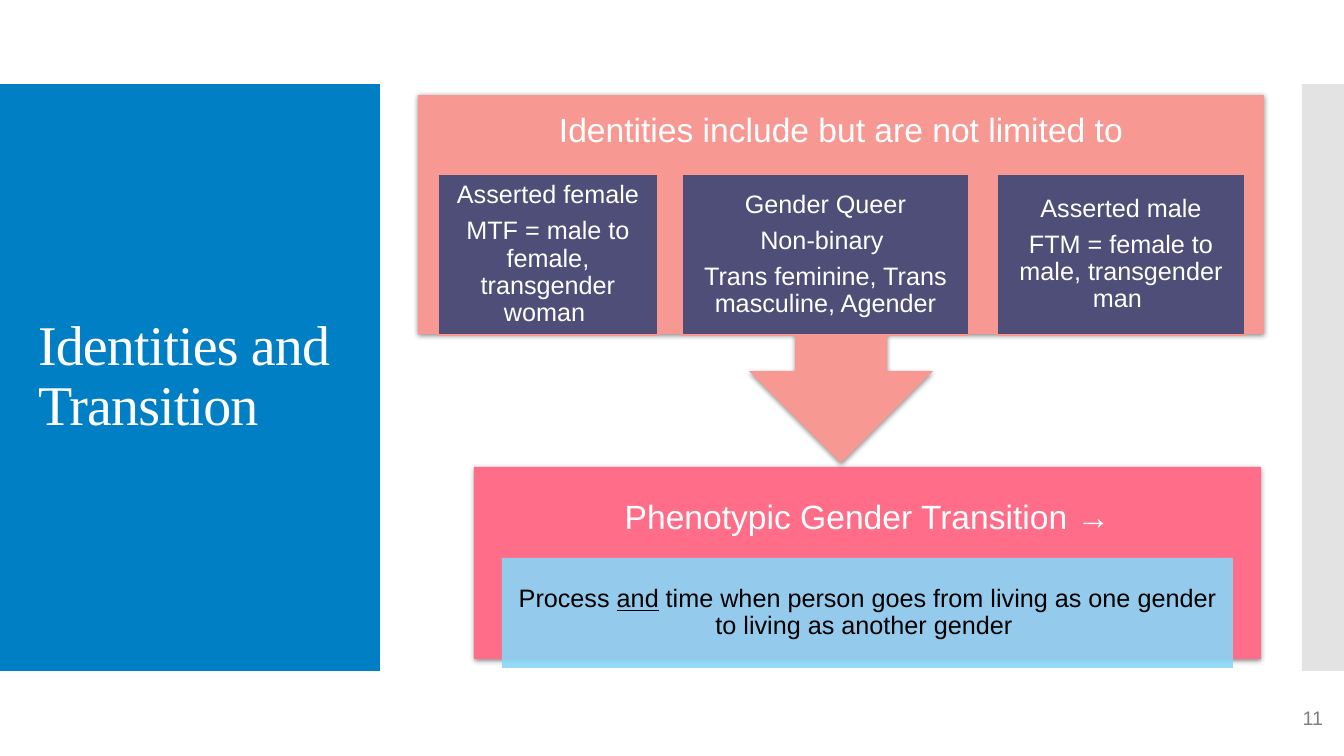
from collections import namedtuple
from dataclasses import dataclass
from lxml.etree import SubElement
from pptx import Presentation
from pptx.dml.color import RGBColor
from pptx.enum.shapes import MSO_SHAPE as SHAPE
from pptx.enum.text import MSO_ANCHOR as ANCHOR, PP_ALIGN as ALIGN
from pptx.oxml.ns import qn
from pptx.util import Pt

PX = 914400 / 100.8
Box = namedtuple("Box", "x y w h")


@dataclass(frozen=True)
class Theme:
    blue: str = "007FC4"
    grey: str = "C8C8C8"
    rose: str = "FF6D88"
    salmon: str = "F79992"
    navy: str = "3C4676"
    sky: str = "89D6F7"
    white: str = "FFFFFF"
    black: str = "000000"
    muted: str = "808080"
    serif: str = "Times New Roman"
    sans: str = "Arial"
    title: int = 40
    heading: int = 24
    body: int = 18
    number: int = 14


T = Theme()


def emu(*lengths):
    return [round(n * PX) for n in lengths]


def within(box, x, y, w, h):
    return Box(box.x + x, box.y + y, w, h)


def add_block(s, box, color, kind=SHAPE.RECTANGLE, opacity=100, line=None, shadow=False):
    sp = s.shapes.add_shape(kind, *emu(*box))
    sp.shadow.inherit = False
    sp.fill.solid()
    sp.fill.fore_color.rgb = RGBColor.from_string(color)
    if opacity < 100:
        clr = sp._element.spPr.find(qn("a:solidFill"))[0]
        SubElement(clr, qn("a:alpha"), val=str(opacity * 1000))
    if line:
        sp.line.color.rgb = RGBColor.from_string(line)
        sp.line.width = Pt(0.85)
    else:
        sp.line.fill.background()
    if shadow:
        effects = sp._element.spPr.find(qn("a:effectLst"))
        outer = SubElement(effects, qn("a:outerShdw"), blurRad=str(Pt(3.5)),
                           dist=str(Pt(1.1)), dir="5400000", rotWithShape="0")
        clr = SubElement(outer, qn("a:srgbClr"), val=T.black)
        SubElement(clr, qn("a:alpha"), val="45000")
    return sp


def add_label(s, box):
    return s.shapes.add_textbox(*emu(*box))


def write(sp, paragraphs, size, color, font=T.sans, align=ALIGN.CENTER,
          anchor=ANCHOR.MIDDLE, inset=(10, 5), leading=0.9, after=0.35, tracking=None):
    tf = sp.text_frame
    tf.word_wrap = True
    tf.vertical_anchor = anchor
    tf.margin_left = tf.margin_right = emu(inset[0])[0]
    tf.margin_top = tf.margin_bottom = emu(inset[1])[0]
    for i, runs in enumerate(paragraphs):
        p = tf.add_paragraph() if i else tf.paragraphs[0]
        p.alignment = align
        p.line_spacing = leading
        p.space_after = Pt(size * after)
        for text, underline in runs:
            r = p.add_run()
            r.text = text
            r.font.name = font
            r.font.size = Pt(size)
            r.font.color.rgb = RGBColor.from_string(color)
            if underline:
                r.font.underline = True
            if tracking:
                r._r.get_or_add_rPr().set("spc", str(tracking))


def plain(*lines):
    return [[(line, False)] for line in lines]


def title_panel(s, box):
    add_block(s, box, T.blue)
    write(add_label(s, within(box, 28, 40, 325, 507)), plain("Identities and Transition"),
          T.title, T.white, T.serif, ALIGN.LEFT, after=0, tracking=-60)


def transition_panel(s, box):
    add_block(s, box, T.rose, shadow=True)
    write(add_label(s, within(box, 0, 0, box.w, 104)),
          plain("Phenotypic Gender Transition →"), T.heading, T.white, inset=(19, 19))
    sp = add_block(s, within(box, 28, 91, box.w - 56, 110), T.sky, opacity=90)
    runs = [("Process ", False), ("and", True),
            (" time when person goes from living as one gender to living as another gender ", False)]
    write(sp, [runs], T.body, T.black, inset=(14, 3))


def identities_callout(s, box):
    sp = add_block(s, box, T.salmon, SHAPE.UP_ARROW_CALLOUT, shadow=True)
    sp.rotation = 180
    write(add_label(s, within(box, 0, 0, box.w, 129)),
          plain("Identities include but are not limited to"),
          T.heading, T.white, anchor=ANCHOR.TOP, inset=(19, 19))
    identities = [
        (20, 220, ("Asserted female", "MTF = male to female, transgender woman ")),
        (264, 287, ("Gender Queer", "Non-binary ", "Trans feminine, Trans masculine, Agender")),
        (579, 248, ("Asserted male", "FTM = female to male, transgender man ")),
    ]
    for x, w, lines in identities:
        sp = add_block(s, within(box, x, 79, w, 161), T.navy, opacity=90, line=T.salmon)
        write(sp, plain(*lines), T.body, T.white, inset=(14, 3))


def page_number(s, box):
    write(add_label(s, box), plain("11"), T.number, T.muted,
          align=ALIGN.RIGHT, anchor=ANCHOR.TOP, leading=1, after=0)


def main():
    prs = Presentation()
    prs.slide_width, prs.slide_height = emu(1344, 756)
    s = prs.slides.add_slide(prs.slide_layouts[6])
    title_panel(s, Box(0, 84, 380, 587))
    add_block(s, Box(1302, 84, 42, 587), T.grey, opacity=50)
    transition_panel(s, Box(474, 467, 787, 192))
    identities_callout(s, Box(418, 95, 846, 368))
    page_number(s, Box(950, 701, 383, 40))
    prs.save("out.pptx")


if __name__ == "__main__":
    main()
